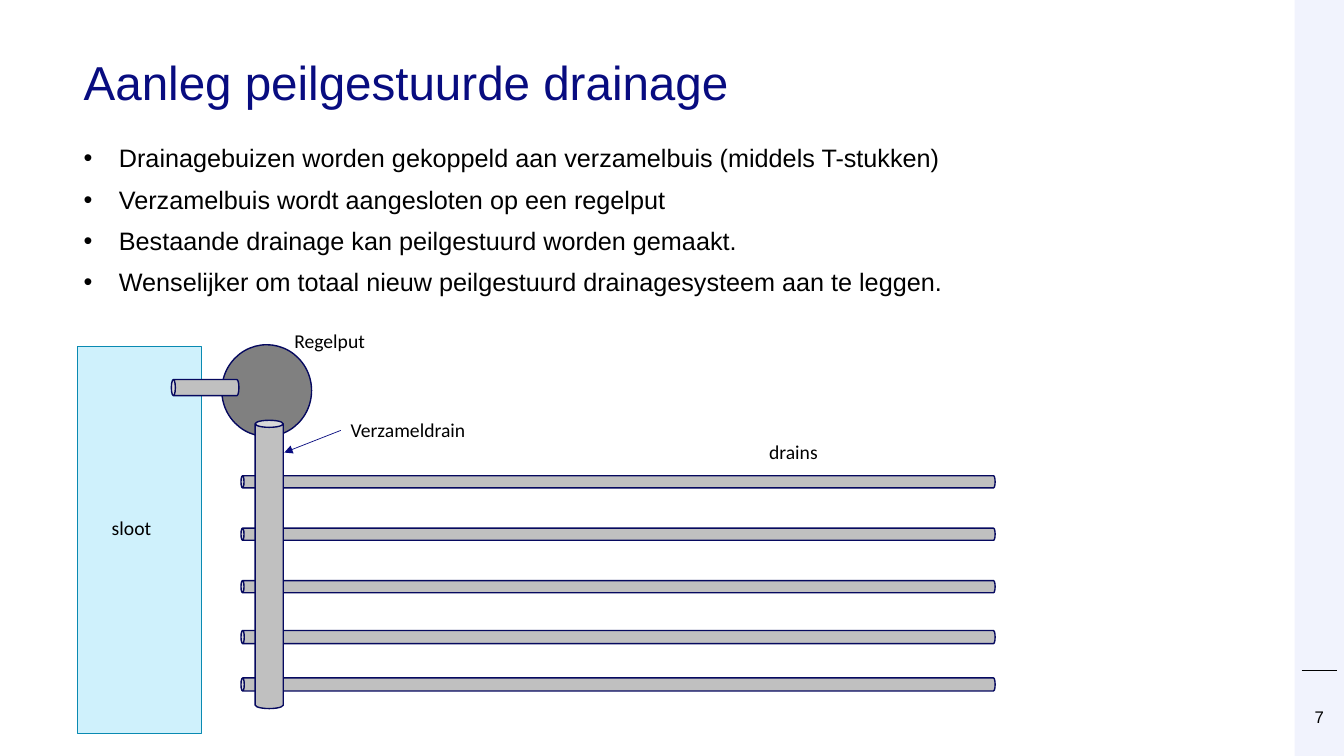
from lxml import etree
from pptx import Presentation
from pptx.dml.color import RGBColor
from pptx.enum.shapes import MSO_CONNECTOR as CONN, MSO_SHAPE as SHAPE
from pptx.enum.text import MSO_ANCHOR as ANCHOR, PP_ALIGN as ALIGN
from pptx.oxml.ns import qn
from pptx.util import Inches, Pt

NAVY = RGBColor(0x08, 0x0C, 0x80)
OUTLINE = RGBColor(0x06, 0x09, 0x5F)
BLACK = RGBColor(0, 0, 0)
PIPE = RGBColor(0xC0, 0xC0, 0xC0)
WELL = RGBColor(0x80, 0x80, 0x80)
WATER = RGBColor(0xCF, 0xF1, 0xFC)
WATER_EDGE = RGBColor(0x0A, 0x8A, 0xB2)
SIDEBAR = RGBColor(0xF1, 0xF3, 0xFD)

prs = Presentation()
prs.slide_width, prs.slide_height = Inches(13.33), Inches(7.5)
CELL = prs.slide_height / 75  # square grid, 75 rows high
s = prs.slides.add_slide(prs.slide_layouts[5])


def add_text(box, lines, sp=None, size=14, font="Calibri", color=BLACK, align=ALIGN.LEFT,
             inset=0, spacing=1.0, gap=0, bullet=False):
    """Write lines in sp, or in a new text box; box is in grid cells."""
    place = [round(v * CELL) for v in box]
    sp = sp or s.shapes.add_textbox(*place)
    sp.left, sp.top, sp.width, sp.height = place
    tf = sp.text_frame
    tf.word_wrap, tf.vertical_anchor = True, ANCHOR.TOP
    tf.margin_left = tf.margin_right = Inches(inset)
    tf.margin_top = tf.margin_bottom = Inches(inset / 2)
    for i, line in enumerate(lines):
        p = tf.paragraphs[0] if i == 0 else tf.add_paragraph()
        p.alignment, p.line_spacing = align, spacing
        p.space_before = Pt(gap if i else 0)
        if bullet:
            pPr = p._p.get_or_add_pPr()
            pPr.set("marL", str(Inches(0.35)))
            pPr.set("indent", str(-Inches(0.35)))
            etree.SubElement(pPr, qn("a:buFont")).set("typeface", "Arial")
            etree.SubElement(pPr, qn("a:buChar")).set("char", "•")
        r = p.add_run()
        r.text = line
        r.font.size, r.font.name, r.font.color.rgb = Pt(size), font, color


def add_part(kind, box, fill, line=OUTLINE, rotation=0):
    """Draw a filled shape; box is in grid cells."""
    sp = s.shapes.add_shape(kind, *[round(v * CELL) for v in box])
    sp.shadow.inherit = False
    sp.rotation = rotation
    sp.fill.solid()
    sp.fill.fore_color.rgb = fill
    if line is None:
        sp.line.fill.background()
    else:
        sp.line.color.rgb, sp.line.width = line, Pt(1)


# Sidebar and ditch
add_part(SHAPE.RECTANGLE, (128.4, 0, 4.9, 75), SIDEBAR, None)
add_part(SHAPE.RECTANGLE, (7.7, 34.4, 12.3, 38.4), WATER, WATER_EDGE)

# Title, bullets and page number
add_text((8.3, 5.9, 115, 10.2), ["Aanleg peilgestuurde drainage"], s.shapes.title,
         size=34, font="Arial", color=NAVY, spacing=0.9)
add_text((8.3, 14.5, 115, 47.2), [
    "Drainagebuizen worden gekoppeld aan verzamelbuis (middels T-stukken)",
    "Verzamelbuis wordt aangesloten op een regelput",
    "Bestaande drainage kan peilgestuurd worden gemaakt.",
    "Wenselijker om totaal nieuw peilgestuurd drainagesysteem aan te leggen.",
], size=18, font="Arial", spacing=0.9, gap=10, bullet=True)
add_text((128.4, 70.1, 4.9, 2), ["7"], size=12, font="Arial", align=ALIGN.CENTER)

# Control well and pipes; horizontal pipes are cans turned on their side
add_part(SHAPE.OVAL, (22, 34.2, 8.9, 9.1), WELL)
drains = [(23.9, y, 74.8, h) for y, h in
          [(47.8, 1.2), (53, 1.2), (58.2, 1.2), (63.2, 1.3), (67.9, 1.3)]]
outlet = (17, 38.45, 6.7, 1.6)
for left, middle, length, bore in drains + [outlet]:
    add_part(SHAPE.CAN, (left + (length - bore) / 2, middle - length / 2, bore, length),
             PIPE, rotation=270)
add_part(SHAPE.CAN, (25.3, 41.7, 2.8, 28.6), PIPE)

# Labels
for label, x, y, width in [("drains", 75.3, 43.2, 7.7), ("Verzameldrain", 33.8, 41, 16.8),
                           ("Regelput", 28.2, 32.1, 16.8), ("sloot", 10.1, 50.7, 6.9)]:
    add_text((x, y, width, 3.4), [label], inset=0.1)

# Sidebar rule and the arrow to the collector pipe
for ends, color, arrow in [((129.1, 66.5, 132.6, 66.5), BLACK, False),
                           ((33.8, 42.7, 28.2, 44.9), NAVY, True)]:
    line = s.shapes.add_connector(CONN.STRAIGHT, *[round(v * CELL) for v in ends])
    line.line.color.rgb, line.line.width = color, Pt(0.5)
    if arrow:
        etree.SubElement(line.line._get_or_add_ln(), qn("a:tailEnd")).set("type", "triangle")
    etree.SubElement(line._element.spPr, qn("a:effectLst"))

prs.save("out.pptx")
